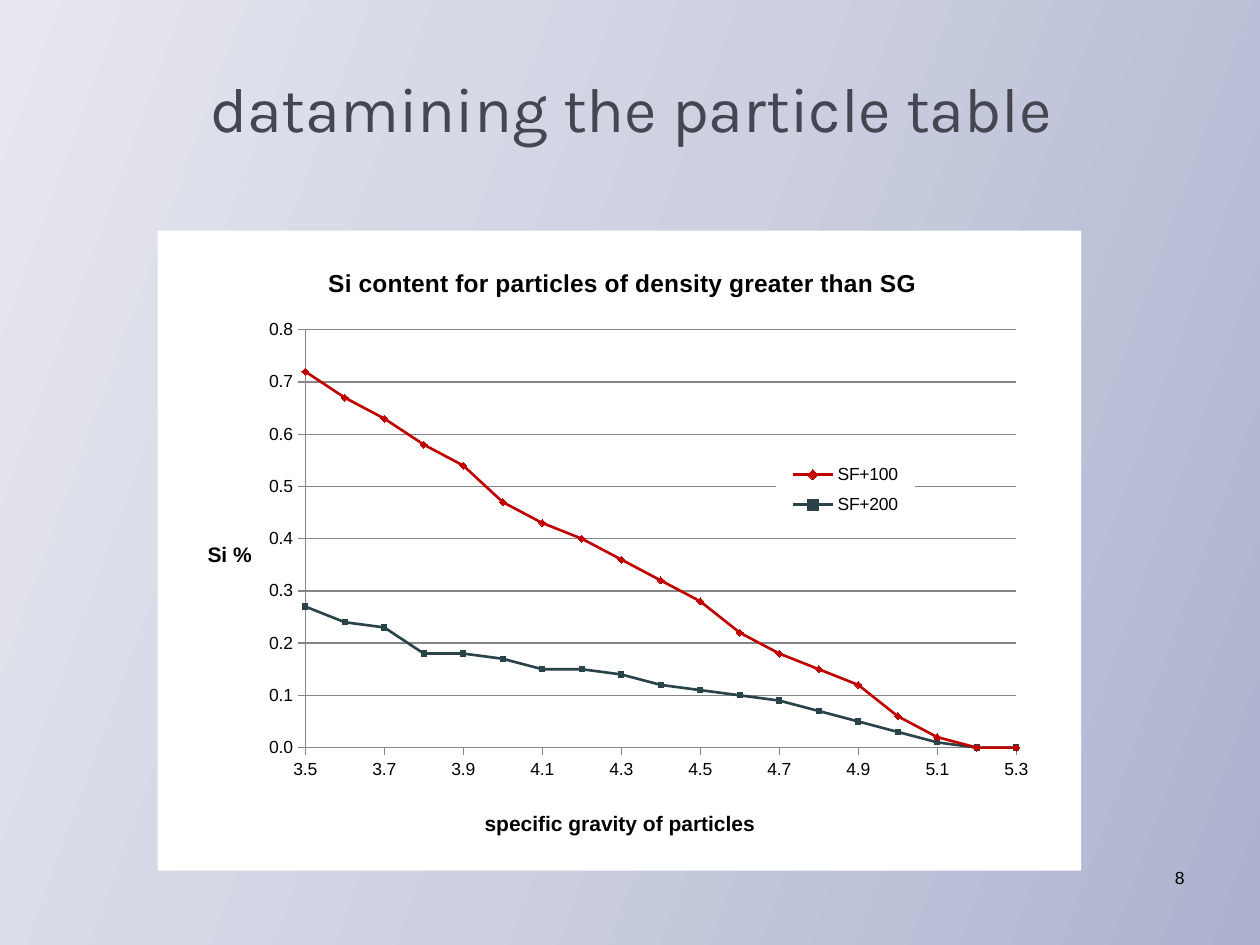
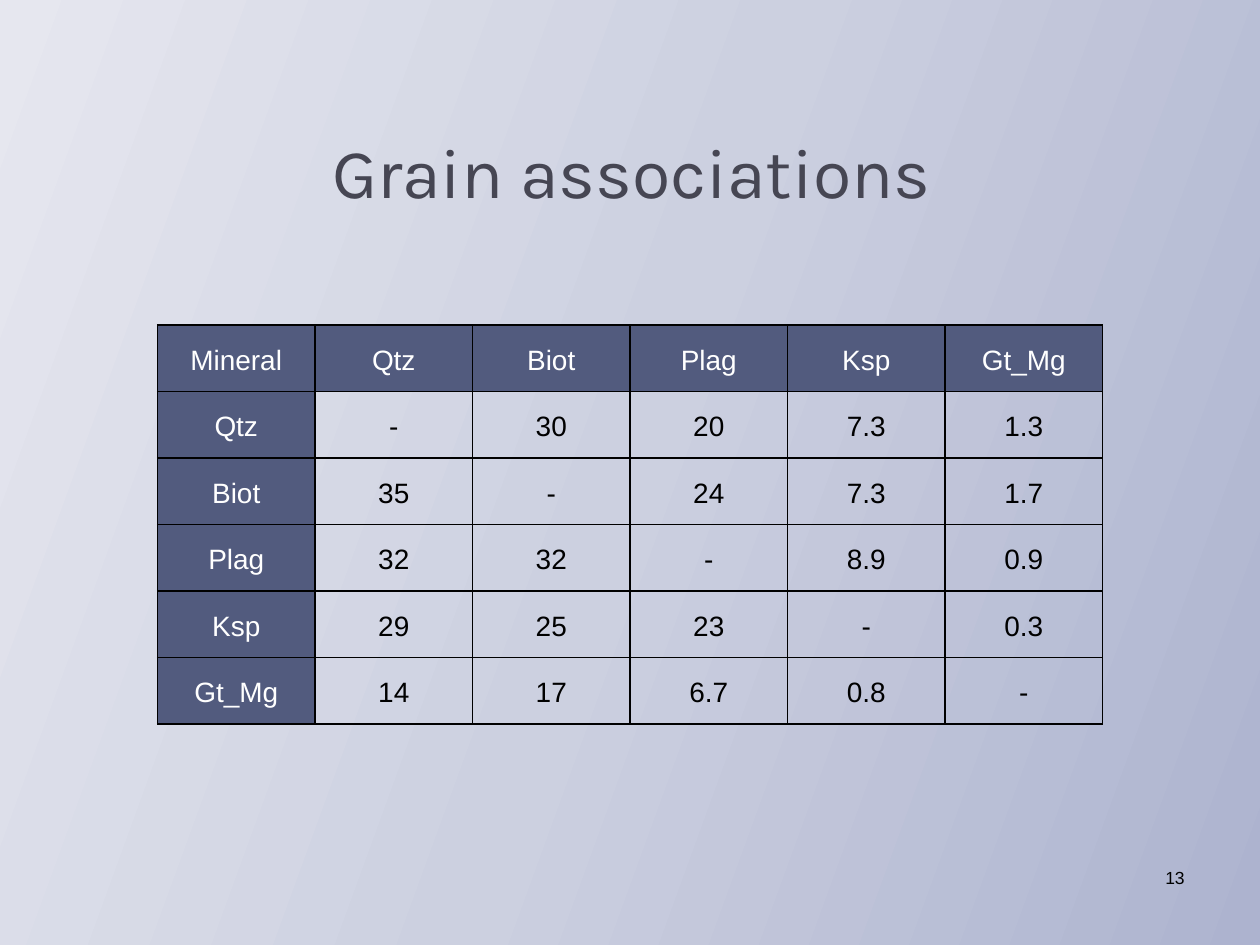
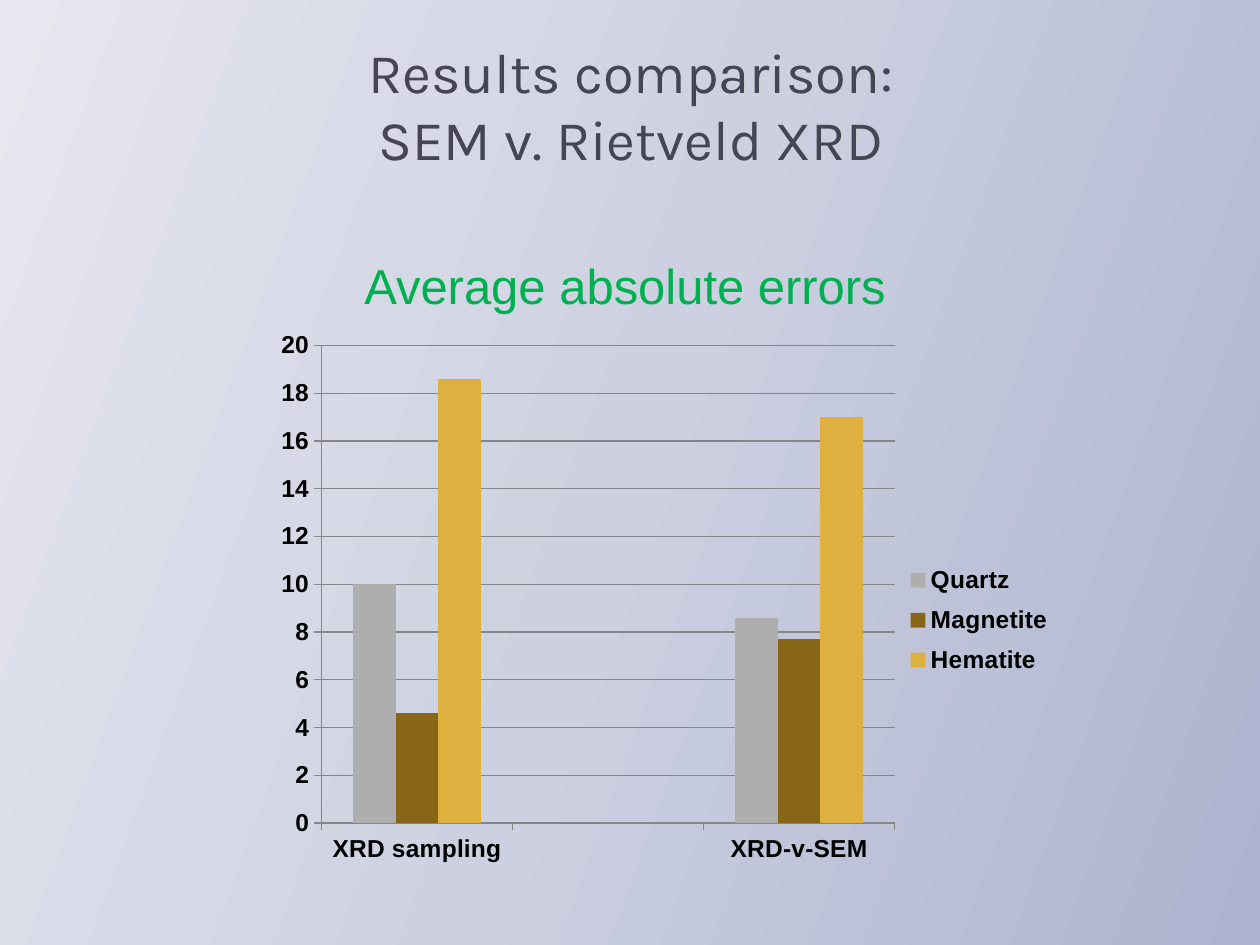
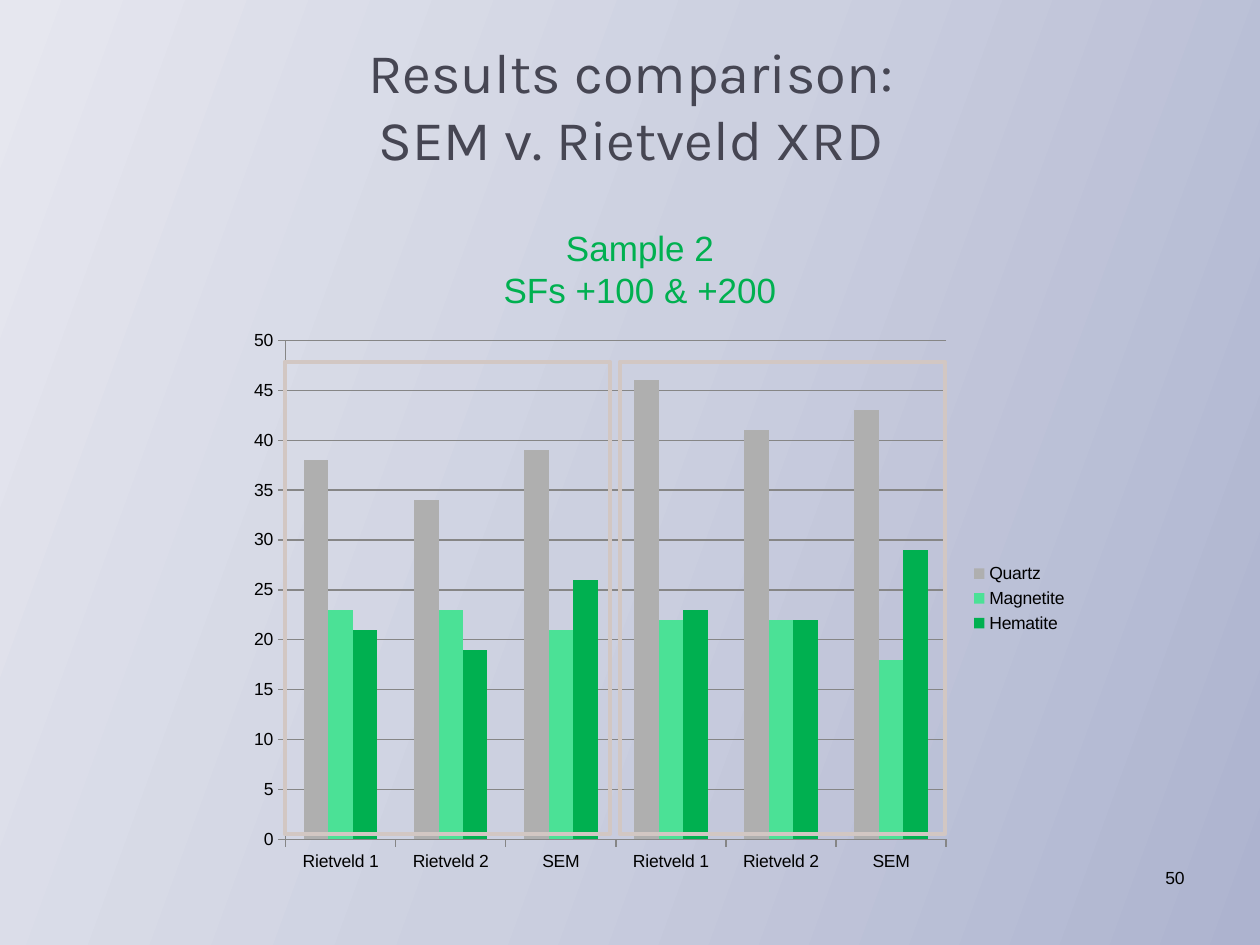
from copy import deepcopy

from pptx import Presentation
from pptx.chart.data import CategoryChartData, XyChartData
from pptx.dml.color import RGBColor
from pptx.enum.chart import (XL_CHART_TYPE, XL_LEGEND_POSITION,
                             XL_MARKER_STYLE, XL_TICK_MARK)
from pptx.enum.shapes import MSO_SHAPE
from pptx.enum.text import MSO_ANCHOR, PP_ALIGN
from pptx.oxml import parse_xml
from pptx.oxml.ns import nsdecls, qn
from pptx.util import Inches, Pt

LEFT, CENTER, RIGHT = PP_ALIGN.LEFT, PP_ALIGN.CENTER, PP_ALIGN.RIGHT
TOP, MIDDLE = MSO_ANCHOR.TOP, MSO_ANCHOR.MIDDLE
SCATTER, COLUMN = XL_CHART_TYPE.XY_SCATTER_LINES, XL_CHART_TYPE.COLUMN_CLUSTERED
DIAMOND, SQUARE = XL_MARKER_STYLE.DIAMOND, XL_MARKER_STYLE.SQUARE
OUTSIDE = XL_TICK_MARK.OUTSIDE
AT_RIGHT = XL_LEGEND_POSITION.RIGHT
RECT = MSO_SHAPE.RECTANGLE

BLACK = RGBColor(0x00, 0x00, 0x00)
WHITE = RGBColor(0xFF, 0xFF, 0xFF)
INK = RGBColor(0x46, 0x46, 0x53)
GREEN = RGBColor(0x00, 0xB0, 0x50)
MINT = RGBColor(0x4B, 0xE1, 0x96)
SLATE = RGBColor(0x52, 0x5B, 0x7E)
GRID = RGBColor(0x86, 0x86, 0x86)
FRAME = RGBColor(0xD2, 0xC7, 0xC3)
RED = RGBColor(0xC0, 0x00, 0x00)
TEAL = RGBColor(0x29, 0x43, 0x49)
SILVER = RGBColor(0xAE, 0xAE, 0xAE)
ASH = RGBColor(0xAF, 0xAF, 0xAF)
BROWN = RGBColor(0x87, 0x67, 0x17)
GOLD = RGBColor(0xDE, 0xB0, 0x3F)
SKY = [(0, RGBColor(0xAD, 0xB3, 0xCF)),
       (0.5, RGBColor(0xCC, 0xD0, 0xE0)),
       (1, RGBColor(0xE6, 0xE7, 0xEF))]

HEAD, BODY = "Karla", "Arial"
COMPARE = "Results comparison:\nSEM v. Rietveld XRD"

# Content: name, values, colour, marker shape, marker size
DENSITY = [
    ("SF+100", [0.72, 0.67, 0.63, 0.58, 0.54, 0.47, 0.43, 0.4, 0.36, 0.32,
                0.28, 0.22, 0.18, 0.15, 0.12, 0.06, 0.02, 0, 0],
     RED, DIAMOND, 4),
    ("SF+200", [0.27, 0.24, 0.23, 0.18, 0.18, 0.17, 0.15, 0.15, 0.14, 0.12,
                0.11, 0.1, 0.09, 0.07, 0.05, 0.03, 0.01, 0, 0],
     TEAL, SQUARE, 3),
]
GRAINS = [
    ["Mineral", "Qtz", "Biot", "Plag", "Ksp", "Gt_Mg"],
    ["Qtz", "-", "30", "20", "7.3", "1.3"],
    ["Biot", "35", "-", "24", "7.3", "1.7"],
    ["Plag", "32", "32", "-", "8.9", "0.9"],
    ["Ksp", "29", "25", "23", "-", "0.3"],
    ["Gt_Mg", "14", "17", "6.7", "0.8", "-"],
]
ERRORS = {
    "at": (1.83, 2.5, 6.75, 4.75),
    "cats": ["XRD sampling", "", "XRD-v-SEM"],
    "rows": [("Quartz", [10, None, 8.6], SILVER),
             ("Magnetite", [4.6, None, 7.7], BROWN),
             ("Hematite", [18.6, None, 17], GOLD)],
    "plot": (0.107, 0.051, 0.674, 0.798),
    "key": (0.79, 0.4, 0.18, 0.22),
    "top": 20, "step": 2, "size": 14, "bold": True,
}
SAMPLE = {
    "at": (1.92, 2.5, 6.67, 4.5),
    "cats": ["Rietveld 1", "Rietveld 2", "SEM"] * 2,
    "rows": [("Quartz", [38, 34, 39, 46, 41, 43], ASH),
             ("Magnetite", [23, 23, 21, 22, 22, 18], MINT),
             ("Hematite", [21, 19, 26, 23, 22, 29], GREEN)],
    "plot": (0.052, 0.045, 0.786, 0.88),
    "key": (0.86, 0.43, 0.13, 0.14),
    "top": 50, "step": 5, "size": 10, "bold": False,
}


def inch(*sizes):
    return [Inches(size) for size in sizes]


def style(font, size, color=BLACK, name=BODY, bold=False):
    font.size, font.name, font.bold = Pt(size), name, bold
    font.color.rgb = color


def write(frame, *lines, size=10, color=BLACK, name=BODY, bold=False,
          align=LEFT, gap=None):
    """Fill a text frame with one paragraph per line."""
    for i, line in enumerate(lines):
        para = frame.add_paragraph() if i else frame.paragraphs[0]
        para.text, para.alignment = line, align
        if gap:
            para.line_spacing = gap
        for run in para.runs:
            style(run.font, size, color, name, bold)


def add_text(slide, at, *lines, anchor=TOP, **form):
    frame = slide.shapes.add_textbox(*inch(*at)).text_frame
    frame.word_wrap, frame.vertical_anchor = True, anchor
    write(frame, *lines, **form)


def add_slide(deck, title, size, top, height, page=None):
    slide = deck.slides.add_slide(deck.slide_layouts[6])
    add_text(slide, (0.51, top, 9, height), title, size=size, color=INK,
             name=HEAD, align=CENTER, anchor=MIDDLE)
    if page:
        add_text(slide, (7.42, 6.83, 2.08, 0.5), page, align=RIGHT)
    return slide


def paint_sky(master):
    fill = master.background.fill
    fill.gradient()
    fill.gradient_angle = 160
    first = fill.gradient_stops
    stops = master.element.find(".//" + qn("a:gsLst"))
    stops.insert(1, deepcopy(stops[0]))
    first = fill.gradient_stops
    for stop, (spot, color) in zip(first, SKY):
        stop.position = spot
        stop.color.rgb = color


def place(node, x, y, w=None, h=None):
    """Put a chart part at fractions of the chart's size."""
    for old in node.findall(qn("c:layout")):
        node.remove(old)
    inner = '<c:layoutTarget val="inner"/>' if node.tag == qn("c:plotArea") else ""
    modes = '<c:xMode val="edge"/><c:yMode val="edge"/>'
    sizes = "".join(f'<c:{key} val="{val}"/>'
                    for key, val in zip("xywh", (x, y, w, h)) if val is not None)
    layout = parse_xml(f'<c:layout {nsdecls("c")}><c:manualLayout>{inner}{modes}'
                       f'{sizes}</c:manualLayout></c:layout>')
    over = node.find(qn("c:overlay"))
    if over is None:
        node.insert(0, layout)
    else:
        over.addprevious(layout)


def backing(color=None):
    fill = (f'<a:solidFill><a:srgbClr val="{color}"/></a:solidFill>'
            if color else "<a:noFill/>")
    return parse_xml(f'<c:spPr {nsdecls("c", "a")}>{fill}'
                     '<a:ln><a:noFill/></a:ln></c:spPr>')


def add_chart(slide, kind, at, data, plot, key, paper=None):
    """Add a chart with its frame, legend and plot area in place."""
    chart = slide.shapes.add_chart(kind, *inch(*at), data).chart
    root = chart.element
    root.find(qn("c:chart")).addnext(backing(paper))
    style(chart.font, 10)
    chart.has_title = False
    chart.has_legend = True
    chart.legend.position = AT_RIGHT
    chart.legend.include_in_layout = False
    legend = root.find(".//" + qn("c:legend"))
    legend.find(qn("c:overlay")).addnext(backing(paper))
    place(legend, *key)
    area = root.find(".//" + qn("c:plotArea"))
    area.append(backing())
    place(area, *plot)
    chart.plots[0].vary_by_categories = False
    return chart


def set_axis(axis, size=10, bold=False, grid=False):
    axis.major_tick_mark = OUTSIDE
    style(axis.tick_labels.font, size, bold=bold)
    axis.has_major_gridlines = grid
    lines = [axis.format.line]
    if grid:
        lines.append(axis.major_gridlines.format.line)
    for line in lines:
        line.color.rgb, line.width = GRID, Pt(0.75)


def set_scale(axis, low, high, step, code):
    axis.minimum_scale, axis.maximum_scale, axis.major_unit = low, high, step
    axis.tick_labels.number_format = code
    axis.tick_labels.number_format_is_linked = False


def set_title(title, text, size, x, y):
    write(title.text_frame, text, size=size, bold=True, align=CENTER)
    title.element.find(".//" + qn("a:bodyPr")).set("rot", "0")
    place(title.element, x, y)


def add_scatter(slide):
    data = XyChartData()
    for name, vals, *_ in DENSITY:
        row = data.add_series(name)
        for i, val in enumerate(vals):
            row.add_data_point(round(3.5 + i / 10, 1), val)
    chart = add_chart(slide, SCATTER, (1.25, 1.83, 7.33, 5.08), data,
                      (0.16, 0.155, 0.77, 0.653), (0.67, 0.35, 0.15, 0.11), WHITE)
    across, up = chart.category_axis, chart.value_axis
    set_axis(across)
    set_axis(up, grid=True)
    set_scale(across, 3.5, 5.3, 0.2, "0.0")
    set_scale(up, 0, 0.8, 0.1, "0.0")
    chart.has_title = True
    set_title(chart.chart_title, "Si content for particles of density greater than SG",
              14, 0.18, 0.05)
    set_title(across.axis_title, "specific gravity of particles", 12, 0.35, 0.9)
    set_title(up.axis_title, "Si %", 12, 0.05, 0.48)
    for line, (_, _, color, mark, size) in zip(chart.series, DENSITY):
        line.smooth = False
        line.format.line.color.rgb, line.format.line.width = color, Pt(1.5)
        line.marker.style, line.marker.size = mark, size
        line.marker.format.fill.solid()
        line.marker.format.fill.fore_color.rgb = color
        line.marker.format.line.color.rgb = color


def add_columns(slide, info):
    data = CategoryChartData()
    data.categories = info["cats"]
    for name, vals, _ in info["rows"]:
        data.add_series(name, vals)
    chart = add_chart(slide, COLUMN, info["at"], data, info["plot"], info["key"])
    size, bold = info["size"], info["bold"]
    set_axis(chart.category_axis, size, bold)
    set_axis(chart.value_axis, size, bold, grid=True)
    set_scale(chart.value_axis, 0, info["top"], info["step"], "0")
    style(chart.legend.font, size, bold=bold)
    chart.plots[0].gap_width, chart.plots[0].overlap = 150, 0
    for bars, (_, _, color) in zip(chart.series, info["rows"]):
        bars.format.fill.solid()
        bars.format.fill.fore_color.rgb = color


def add_edges(cell):
    props = cell._tc.get_or_add_tcPr()
    for i, side in enumerate("LRTB"):
        props.insert(i, parse_xml(
            f'<a:ln{side} {nsdecls("a")} w="{Pt(1)}"><a:solidFill>'
            f'<a:srgbClr val="{BLACK}"/></a:solidFill></a:ln{side}>'))


def add_grid(slide):
    table = slide.shapes.add_table(len(GRAINS), len(GRAINS[0]),
                                   *inch(1.25, 2.58, 7.5, 3.17)).table
    table.first_row = table.horz_banding = False
    for r, row in enumerate(GRAINS):
        for c, text in enumerate(row):
            cell = table.cell(r, c)
            label = r == 0 or c == 0
            cell.vertical_anchor = MIDDLE
            cell.margin_left = cell.margin_right = Inches(0.07)
            cell.margin_top = cell.margin_bottom = 0
            if label:
                cell.fill.solid()
                cell.fill.fore_color.rgb = SLATE
            else:
                cell.fill.background()
            write(cell.text_frame, text, size=16, align=CENTER, gap=1.15,
                  color=WHITE if label else BLACK)
            add_edges(cell)


def add_frame(slide, left):
    box = slide.shapes.add_shape(RECT, *inch(left, 2.87, 2.58, 3.75))
    box.shadow.inherit = False
    box.fill.background()
    box.line.color.rgb, box.line.width = FRAME, Pt(2.25)


def main():
    deck = Presentation()
    deck.slide_width, deck.slide_height = inch(10, 7.5)
    paint_sky(deck.slide_master)

    add_scatter(add_slide(deck, "datamining the particle table", 36, 0.46, 0.79, "8"))
    add_grid(add_slide(deck, "Grain associations", 40, 0.96, 0.79, "13"))

    slide = add_slide(deck, COMPARE, 32, 0.33, 1)
    add_text(slide, (2.67, 1.98, 4.58, 0.57), "Average absolute errors",
             size=28, color=GREEN, align=CENTER)
    add_columns(slide, ERRORS)

    slide = add_slide(deck, COMPARE, 32, 0.33, 1, "50")
    add_columns(slide, SAMPLE)
    add_text(slide, (3.83, 1.75, 2.5, 0.77), "Sample 2", "SFs +100 & +200",
             size=20, color=GREEN, align=CENTER)
    for left in (2.26, 4.92):
        add_frame(slide, left)

    deck.save("out.pptx")


if __name__ == "__main__":
    main()
